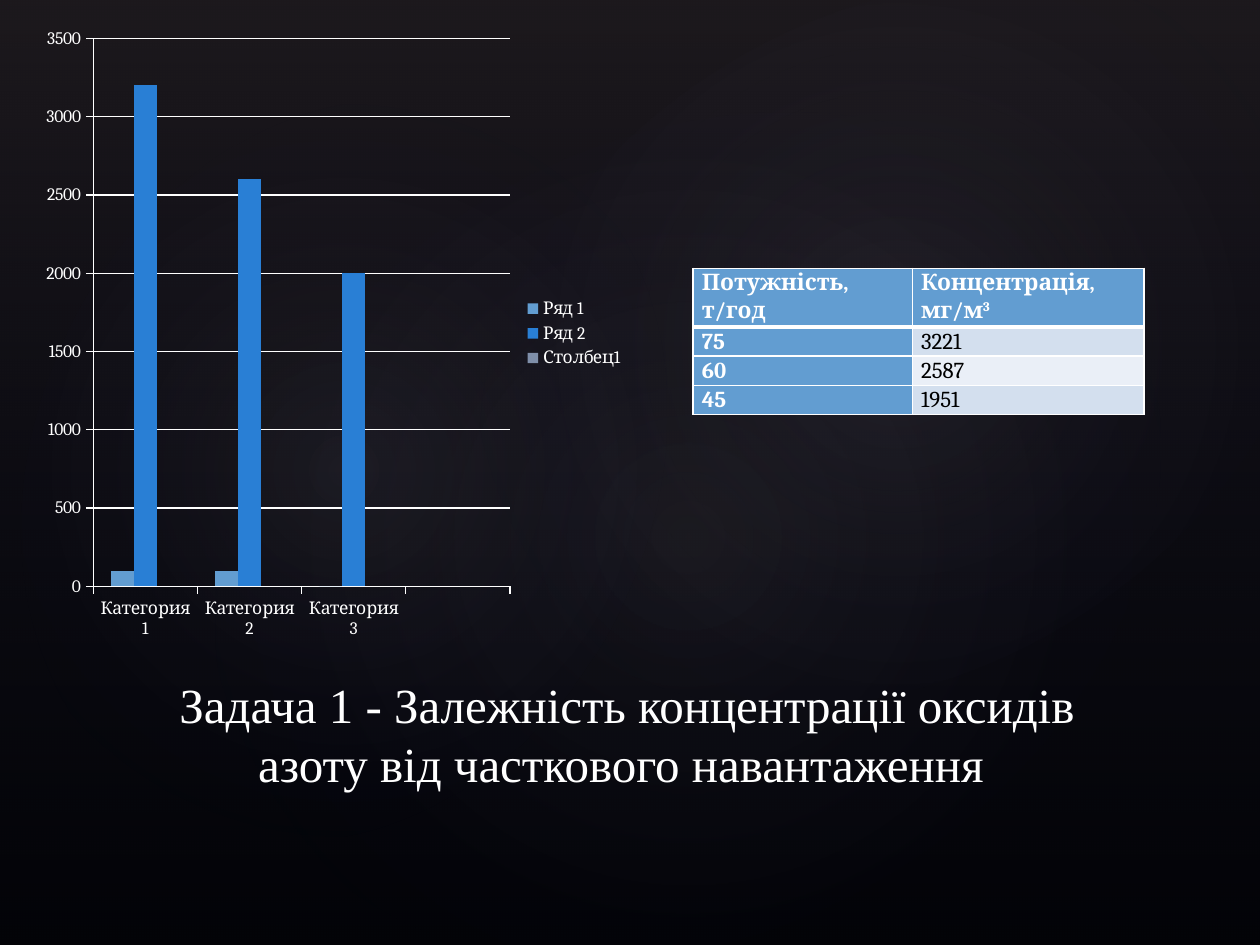
"""Build a slide on nitrogen oxide concentration under partial load."""
from dataclasses import dataclass

from pptx import Presentation, oxml
from pptx import util as u
from pptx.chart import data
from pptx.dml.color import RGBColor
from pptx.enum import chart as charts, shapes, text
from pptx.oxml import ns


@dataclass(frozen=True)
class Theme:
    white: str = "FFFFFF"
    black: str = "000000"
    navy: str = "242852"
    plum: str = "504652"
    haze: str = "C4BCC6"
    header: str = "629DD1"
    series: tuple = ("629DD1", "297FD5", "7F8FA9")
    bands: tuple = ("D3DFEE", "EAEFF7")
    body_font: str = "Cambria"
    title_font: str = "Times New Roman"
    title_size: int = 28
    table_size: int = 13
    chart_size: int = 10


theme = Theme()


def set_font(font, name, size, color, bold=False):
    font.name, font.size, font.bold = name, u.Pt(size), bold
    font.color.rgb = RGBColor.from_string(color)


def add_glow(kind, box, rotation, stops, direction):
    glow = slide.shapes.add_shape(kind, *map(u.Cm, box))
    glow.rotation = rotation
    glow.shadow.inherit = False
    glow.line.fill.background()
    stop_xml = "".join(
        f'<a:gs pos="{place * 1000}"><a:srgbClr val="{color}">'
        f'<a:alpha val="{alpha * 1000}"/></a:srgbClr></a:gs>'
        for place, color, alpha in stops)
    glow._element.spPr.insert(2, oxml.parse_xml(
        f'<a:gradFill {ns.nsdecls("a")} rotWithShape="1">'
        f'<a:gsLst>{stop_xml}</a:gsLst>{direction}</a:gradFill>'))


deck = Presentation()
deck.slide_width, deck.slide_height = u.Cm(25.4), u.Cm(19.05)
slide = deck.slides.add_slide(deck.slide_layouts[6])
slide.background.fill.solid()
slide.background.fill.fore_color.rgb = RGBColor.from_string(theme.black)

add_glow(shapes.MSO_SHAPE.RECTANGLE, (0, 0, 25.4, 19.05), 0,
         [(0, theme.plum, 36), (100, theme.navy, 10)],
         '<a:lin ang="5400000" scaled="0"/>')
radial = ('<a:path path="circle"><a:fillToRect l="50000" t="50000" '
          'r="50000" b="50000"/></a:path>')
for box, rotation, alpha in [((3.81, 2.9, 20.12, 15.85), 328.7, 7),
                             ((-0.76, 3.25, 15.39, 12.45), 294.3, 8),
                             ((9.09, 0.33, 18.01, 13.21), 328.7, 8)]:
    add_glow(shapes.MSO_SHAPE.OVAL, box, rotation,
             [(0, theme.haze, alpha), (58, theme.navy, 0)], radial)

title = slide.shapes.add_textbox(*map(u.Cm, (2.16, 13.55, 20.96, 2.54))).text_frame
title.word_wrap = True
title.vertical_anchor = text.MSO_ANCHOR.BOTTOM
heading = title.paragraphs[0]
heading.text = ("Задача 1 - Залежність концентрації оксидів азоту "
                "від часткового навантаження ")
heading.alignment = text.PP_ALIGN.CENTER
set_font(heading.font, theme.title_font, theme.title_size, theme.white)

load_data = data.CategoryChartData()
load_data.categories = ["Категория 1", "Категория 2", "Категория 3", ""]
load_data.add_series("Ряд 1", (100, 100, 0, None))
load_data.add_series("Ряд 2", (3200, 2600, 2000, None))
load_data.add_series("Столбец1", (None,) * 4)
load_chart = slide.shapes.add_chart(
    charts.XL_CHART_TYPE.COLUMN_CLUSTERED,
    *map(u.Cm, (0.69, 0.32, 12.14, 12.8)), load_data).chart
set_font(load_chart.font, theme.body_font, theme.chart_size, theme.white)
load_chart.has_title = False
load_chart.has_legend = True
load_chart.legend.position = charts.XL_LEGEND_POSITION.RIGHT
load_chart.legend.include_in_layout = False
columns = load_chart.plots[0]
columns.gap_width, columns.overlap = 150, 0
columns.vary_by_categories = False
for series, color in zip(columns.series, theme.series):
    series.format.fill.solid()
    series.format.fill.fore_color.rgb = RGBColor.from_string(color)
load_chart.value_axis.has_major_gridlines = True
load_chart.value_axis.minimum_scale = 0
load_chart.value_axis.maximum_scale = 3500
load_chart.value_axis.major_unit = 500
for axis in (load_chart.category_axis, load_chart.value_axis):
    axis.major_tick_mark = charts.XL_TICK_MARK.OUTSIDE
for ruled in (load_chart.category_axis, load_chart.value_axis,
              load_chart.value_axis.major_gridlines):
    ruled.format.line.width = u.Pt(0.75)
    ruled.format.line.color.rgb = RGBColor.from_string(theme.white)

rows = [("Потужність, т/год", "Концентрація, мг/м"),
        (75, 3221), (60, 2587), (45, 1951)]
load_table = slide.shapes.add_table(
    len(rows), 2, *map(u.Cm, (13.97, 5.41, 9.09, 2.92))).table
for column, width in zip(load_table.columns, (4.42, 4.67)):
    column.width = u.Cm(width)
for r, values in enumerate(rows):
    load_table.rows[r].height = u.Cm(0.58)
    for c, value in enumerate(values):
        cell = load_table.cell(r, c)
        is_header = r == 0 or c == 0
        cell.margin_left = cell.margin_right = u.Cm(0.18)
        cell.margin_top = cell.margin_bottom = 0
        entry = cell.text_frame.paragraphs[0]
        entry.line_spacing = 1.07
        entry.add_run().text = str(value)
        set_font(entry.font, theme.body_font, theme.table_size,
                 theme.white if is_header else theme.black, is_header)
        if (r, c) == (0, 1):
            cube = entry.add_run()
            cube.text = "3"
            cube.font._element.set("baseline", "30000")
        cell.fill.solid()
        cell.fill.fore_color.rgb = RGBColor.from_string(
            theme.header if is_header else theme.bands[(r - 1) % 2])
        for i, side in enumerate("LRTB"):
            points = 3 if (r, side) in ((0, "B"), (1, "T")) else 1
            cell._tc.tcPr.insert(i, oxml.parse_xml(
                f'<a:ln{side} {ns.nsdecls("a")} w="{u.Pt(points)}"><a:solidFill>'
                f'<a:srgbClr val="{theme.white}"/></a:solidFill></a:ln{side}>'))

deck.save("out.pptx")
